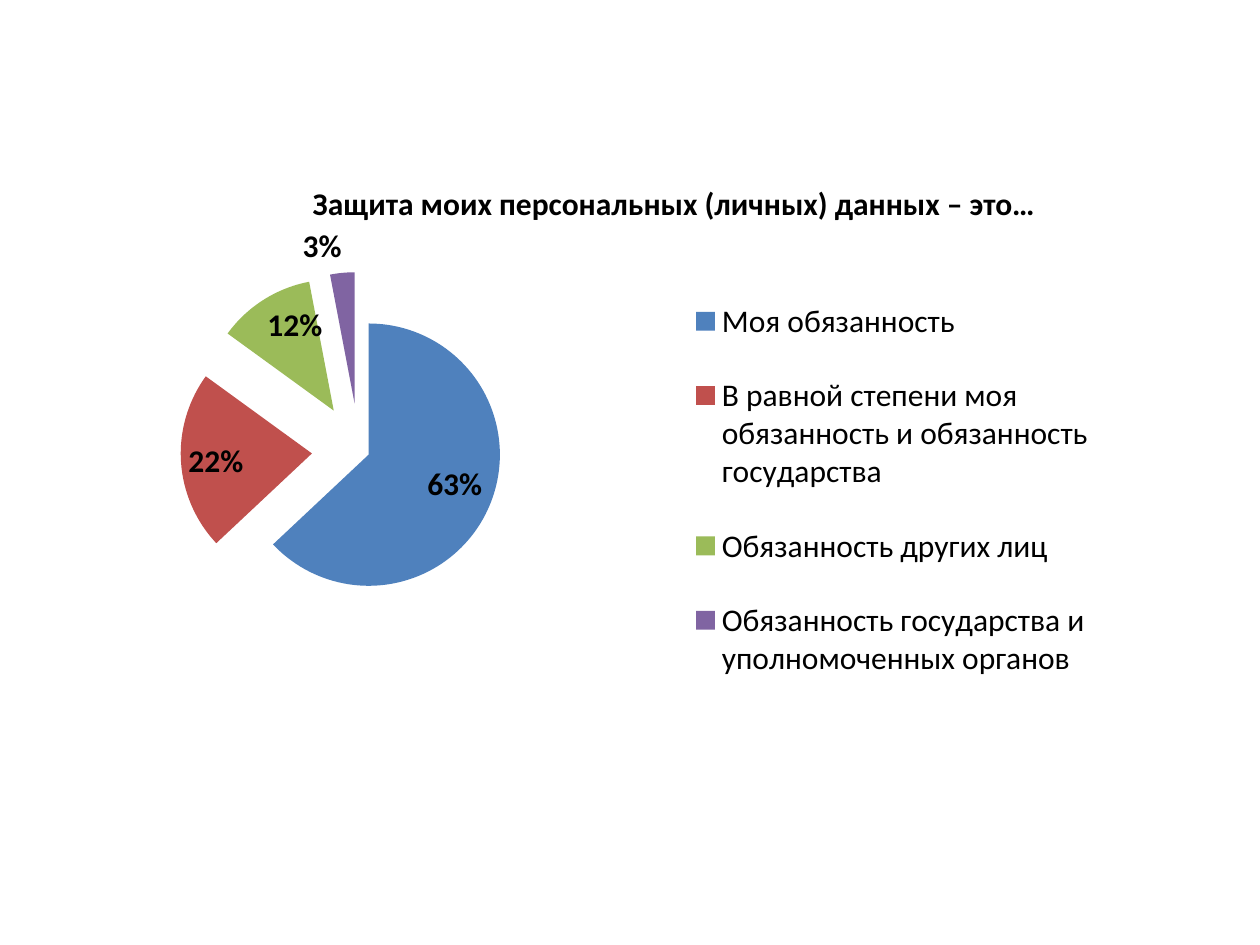
import pptx
import pptx.chart.data
import pptx.dml.color
import pptx.enum.chart
import pptx.enum.text
import pptx.oxml
import pptx.oxml.ns
import pptx.util

RGB = pptx.dml.color.RGBColor
BLACK = RGB(0x00, 0x00, 0x00)
BLUE = RGB(0x4F, 0x81, 0xBD)
RED = RGB(0xC0, 0x50, 0x4D)
GREEN = RGB(0x9B, 0xBB, 0x59)
PURPLE = RGB(0x80, 0x64, 0xA2)
FONT = "Calibri"
WIDE, HIGH = pptx.util.Inches(10), pptx.util.Inches(7.5)
BURST = 36

# answer, percent, colour, explosion
SHARES = [
    ("Моя обязанность", 63, BLUE, 8),
    ("В равной степени моя обязанность и обязанность государства", 22, RED, BURST),
    ("Обязанность других лиц", 12, GREEN, BURST),
    ("Обязанность государства и уполномоченных органов", 3, PURPLE, BURST),
]


def area(left, top, width, height):
    """Turn shares of the slide's size into lengths."""
    return int(left * WIDE), int(top * HIGH), int(width * WIDE), int(height * HIGH)


def style(font, size=18, bold=False, color=BLACK):
    font.name = FONT
    font.size = pptx.util.Pt(size)
    font.bold = bold
    font.color.rgb = color


def write(shape, text, align=pptx.enum.text.PP_ALIGN.CENTER, **form):
    frame = shape.text_frame
    frame.word_wrap = True
    frame.auto_size = pptx.enum.text.MSO_AUTO_SIZE.NONE
    frame.vertical_anchor = pptx.enum.text.MSO_ANCHOR.MIDDLE
    para = frame.paragraphs[0]
    para.alignment = align
    run = para.add_run()
    run.text = text
    style(run.font, **form)


def node(name, body="", attrs=""):
    """Make a chart element with the given content."""
    space = pptx.oxml.ns.nsdecls("c", "a")
    return pptx.oxml.parse_xml(f"<c:{name} {space} {attrs}>{body}</c:{name}>")


def burst(value):
    return node("explosion", attrs=f'val="{value}"')


def lay(part, index, x, y, w, h, inner=False):
    """Fix a chart part's place, in shares of the chart's size."""
    for old in part.findall(pptx.oxml.ns.qn("c:layout")):
        part.remove(old)
    target = '<c:layoutTarget val="inner"/>' if inner else ""
    modes = '<c:xMode val="edge"/><c:yMode val="edge"/>'
    sizes = "".join(f'<c:{key} val="{val}"/>'
                    for key, val in zip("xywh", (x, y, w, h)))
    body = f"<c:manualLayout>{target}{modes}{sizes}</c:manualLayout>"
    part.insert(index, node("layout", body))


def paint(series):
    """Colour the slices and pull them apart."""
    for index, (_, _, color, _) in enumerate(SHARES):
        fill = series.points[index].format.fill
        fill.solid()
        fill.fore_color.rgb = color
    dots = series._element.findall(pptx.oxml.ns.qn("c:dPt"))
    dots[0].addprevious(burst(BURST))
    for dot, row in zip(dots, SHARES):
        dot.insert(1, burst(row[3]))


def label(series):
    spot = pptx.enum.chart.XL_LABEL_POSITION
    labels = series.data_labels
    labels.show_value = True
    labels.position = spot.INSIDE_END
    style(labels.font, bold=True)
    small = series.points[len(SHARES) - 1].data_label
    style(small.font, bold=True)
    small.position = spot.OUTSIDE_END


def add_pie(slide, box):
    kinds = pptx.enum.chart
    data = pptx.chart.data.CategoryChartData(number_format='0"%"')
    data.categories = [row[0] for row in SHARES]
    data.add_series("Series 1", [row[1] for row in SHARES])
    chart = slide.shapes.add_chart(kinds.XL_CHART_TYPE.PIE, *box, data).chart
    chart.has_title = False
    style(chart.font)

    plot = chart.plots[0]
    plot.vary_by_categories = True
    paint(plot.series[0])
    label(plot.series[0])

    chart.has_legend = True
    legend = chart.legend
    legend.position = kinds.XL_LEGEND_POSITION.RIGHT
    legend.include_in_layout = False
    style(legend.font)
    lay(legend._element, 1, 0.53, 0.19, 0.38, 0.74)

    space = chart._chartSpace
    lay(space.chart.plotArea, 0, 0.05, 0.2, 0.4, 0.59, inner=True)
    space.chart.addnext(node("spPr", "<a:noFill/><a:ln><a:noFill/></a:ln>"))


def main():
    deck = pptx.Presentation()
    deck.slide_width, deck.slide_height = WIDE, HIGH
    slide = deck.slides.add_slide(deck.slide_layouts[5])
    title = slide.shapes.title
    title.left, title.top, title.width, title.height = area(0.15, 0.19, 0.77, 0.05)
    write(title, "Защита моих персональных (личных) данных – это…", bold=True)
    add_pie(slide, area(0.06, 0.16, 0.9, 0.64))
    deck.save("out.pptx")


if __name__ == "__main__":
    main()
